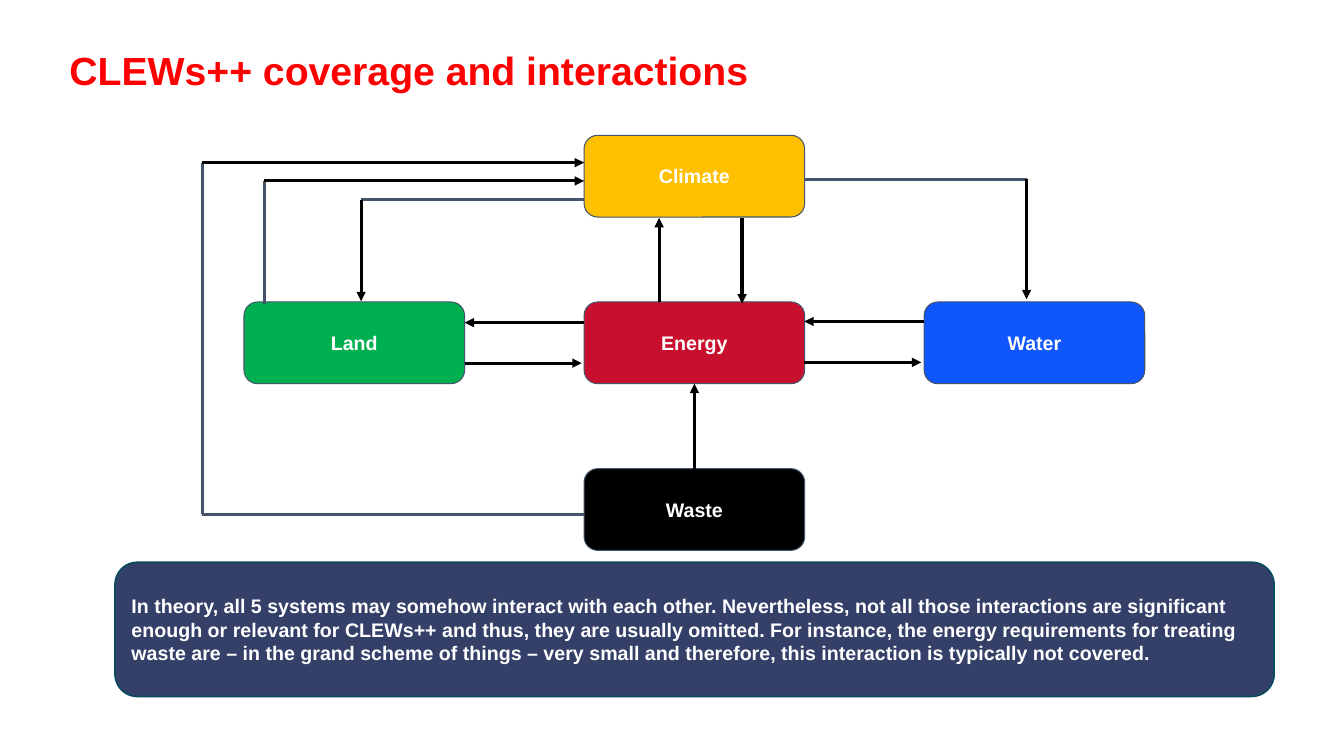
from itertools import pairwise

from lxml.etree import SubElement
from pptx import Presentation
from pptx.dml.color import RGBColor
from pptx.enum.shapes import MSO_CONNECTOR, MSO_SHAPE
from pptx.enum.text import MSO_ANCHOR, PP_ALIGN
from pptx.oxml.ns import qn
from pptx.util import Cm, Pt

COLORS = {
    "title": "FF0000", "text": "FFFFFF", "arrow": "000000", "slate": "44546A",
    "Climate": "FFC000", "Land": "00B050", "Energy": "C8102E",
    "Water": "0F56FD", "Waste": "000000",
    "note": "344068", "note_line": "0B4960",
}


def color(name):
    return RGBColor.from_string(COLORS[name])


def write(sp, text, size, font_color, anchor, align):
    tf = sp.text_frame
    tf.word_wrap = True
    tf.vertical_anchor = anchor
    p = tf.paragraphs[0]
    p.text = text
    p.alignment = align
    p.font.name = "Arial"
    p.font.size = Pt(size)
    p.font.bold = True
    p.font.color.rgb = color(font_color)
    return p


prs = Presentation()
prs.slide_width, prs.slide_height = Cm(33.87), Cm(19.05)
s = prs.slides.add_slide(prs.slide_layouts[6])

title = s.shapes.add_textbox(Cm(1.5), Cm(0), Cm(18.7), Cm(2.49))
p = write(title, "CLEWs++ coverage and interactions", 28, "title",
          MSO_ANCHOR.BOTTOM, PP_ALIGN.LEFT)
p.line_spacing = 0.9

# Systems on a grid: column, row
SYSTEMS = {"Climate": (1, 0), "Land": (0, 1), "Energy": (1, 1),
           "Water": (2, 1), "Waste": (1, 2)}
boxes = {}
for name, (col, row) in SYSTEMS.items():
    sp = s.shapes.add_shape(MSO_SHAPE.ROUNDED_RECTANGLE,
                            Cm(6.15 + 8.57 * col), Cm(3.41 + 4.2 * row),
                            Cm(5.56), Cm(2.06))
    sp.shadow.inherit = False
    sp.fill.solid()
    sp.fill.fore_color.rgb = color(name)
    sp.line.color.rgb = color("slate")
    sp.line.width = Pt(0.75)
    write(sp, name, 14, "text", MSO_ANCHOR.MIDDLE, PP_ALIGN.CENTER)
    boxes[name] = sp

# Each route ends in a black arrow; the legs before it are slate
ROUTES = [
    [(16.61, 7.62), (16.61, 5.49)],  # Energy to Climate
    [(18.7, 5.49), (18.7, 7.65)],  # Climate to Energy
    [(20.27, 9.13), (23.22, 9.13)],  # Energy to Water
    [(23.29, 8.1), (20.27, 8.1)],  # Water to Energy
    [(11.71, 9.15), (14.66, 9.15)],  # Land to Energy
    [(14.72, 8.13), (11.71, 8.13)],  # Energy to Land
    [(17.5, 11.81), (17.5, 9.67)],  # Waste to Energy
    [(14.72, 12.96), (5.1, 12.96), (5.1, 4.1), (14.72, 4.1)],  # Waste to Climate
    [(6.66, 7.65), (6.66, 4.56), (14.72, 4.56)],  # Land to Climate
    [(14.72, 5.03), (9.1, 5.03), (9.1, 7.59)],  # Climate to Land
    [(20.27, 4.52), (25.87, 4.52), (25.87, 7.54)],  # Climate to Water
]
WASTE_TO_ENERGY = ROUTES[6]
for route in ROUTES:
    for start, end in pairwise(route):
        is_arrow = end == route[-1]
        line = s.shapes.add_connector(MSO_CONNECTOR.STRAIGHT,
                                      *map(Cm, start + end))
        line.line.color.rgb = color("arrow" if is_arrow else "slate")
        line.line.width = Pt(2.25)
        sp_pr = line._element.spPr
        if is_arrow:
            SubElement(sp_pr.find(qn("a:ln")), qn("a:tailEnd"), type="triangle")
        SubElement(sp_pr, qn("a:effectLst"))
        if route is WASTE_TO_ENERGY:
            line.begin_connect(boxes["Waste"], 0)
            line.end_connect(boxes["Energy"], 2)

note = s.shapes.add_shape(MSO_SHAPE.ROUNDED_RECTANGLE,
                          Cm(2.9), Cm(14.17), Cm(29.21), Cm(3.38))
note.shadow.inherit = False
note.fill.solid()
note.fill.fore_color.rgb = color("note")
note.line.color.rgb = color("note_line")
note.line.width = Pt(1.25)
write(note, "In theory, all 5 systems may somehow interact with each other. "
      "Nevertheless, not all those interactions are significant enough or "
      "relevant for CLEWs++ and thus, they are usually omitted. For instance, "
      "the energy requirements for treating waste are – in the grand scheme of "
      "things – very small and therefore, this interaction is typically not "
      "covered.", 14, "text", MSO_ANCHOR.MIDDLE, PP_ALIGN.LEFT)

prs.save("out.pptx")
